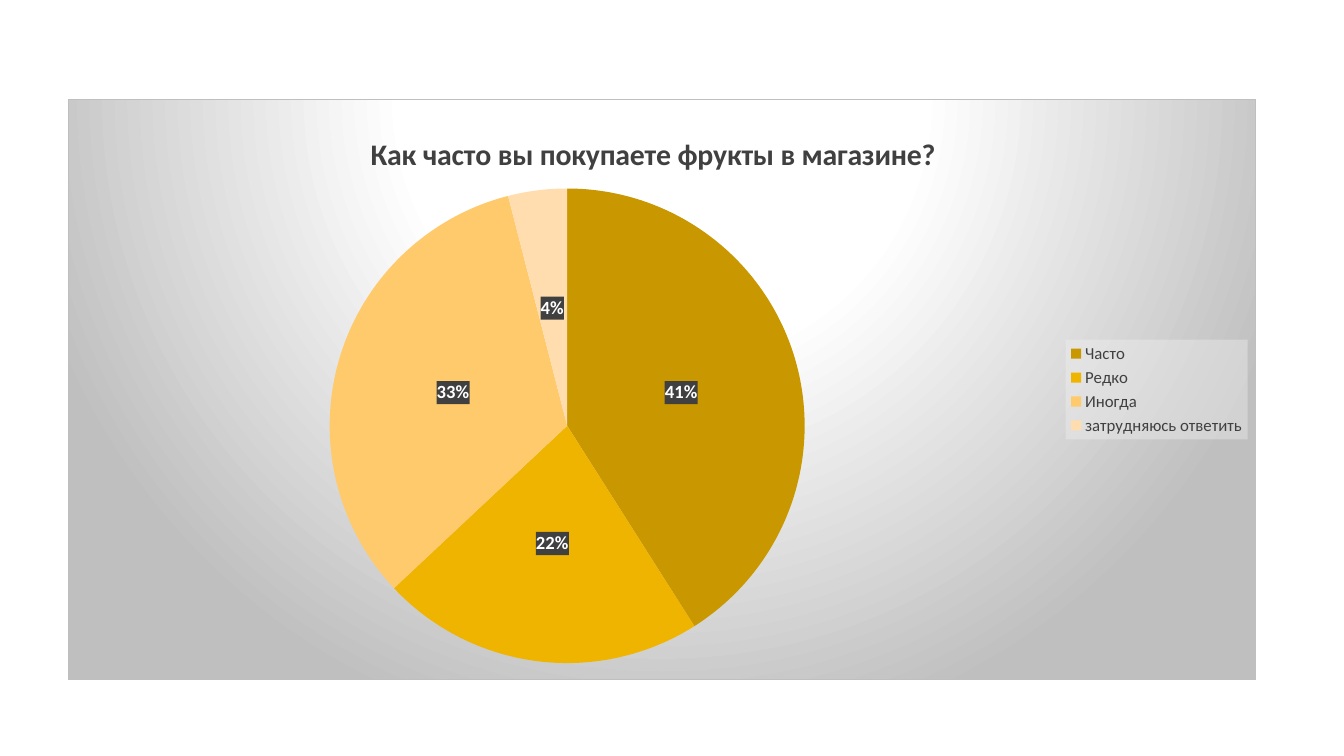
from pptx import Presentation
from pptx.chart.data import CategoryChartData as ChartData
from pptx.dml.color import RGBColor
from pptx.enum.chart import XL_CHART_TYPE as Kind
from pptx.enum.chart import XL_LABEL_POSITION as Spot
from pptx.enum.chart import XL_LEGEND_POSITION as Side
from pptx.oxml import parse_xml
from pptx.oxml.ns import nsdecls, qn
from pptx.util import Pt

FACE = "Calibri"
BLACK = RGBColor(0x00, 0x00, 0x00)
WHITE = RGBColor(0xFF, 0xFF, 0xFF)
DARK = RGBColor(0x40, 0x40, 0x40)
GRAY = RGBColor(0xBF, 0xBF, 0xBF)
PALE = RGBColor(0xF2, 0xF2, 0xF2)
SLICES = [
    ("Часто", 41, RGBColor(0xC9, 0x98, 0x00)),
    ("Редко ", 22, RGBColor(0xEF, 0xB4, 0x00)),
    ("Иногда", 33, RGBColor(0xFF, 0xCA, 0x6C)),
    ("затрудняюсь ответить", 4, RGBColor(0xFF, 0xDD, 0xAF)),
]
TITLE = "Как часто вы покупаете фрукты в магазине?"


def style(font, size, color, bold=False):
    font.name, font.size, font.bold = FACE, Pt(size), bold
    font.color.rgb = color


def solid(color, alpha):
    """Return a fill with its opacity in percent."""
    return (f'<a:solidFill><a:srgbClr val="{color}"><a:alpha val="{alpha * 1000}"/>'
            '</a:srgbClr></a:solidFill>')


def glow():
    """Return the round white-to-gray fill and the thin border."""
    stops = "".join(
        f'<a:gs pos="{pos * 1000}"><a:srgbClr val="{color}"/></a:gs>'
        for pos, color in ((0, WHITE), (39, WHITE), (100, GRAY)))
    return (f'<a:gradFill><a:gsLst>{stops}</a:gsLst><a:path path="circle">'
            '<a:fillToRect l="50000" t="-80000" r="50000" b="180000"/></a:path></a:gradFill>'
            f'<a:ln w="{Pt(0.75)}"><a:solidFill><a:srgbClr val="{GRAY}"/></a:solidFill></a:ln>')


def look(body):
    return parse_xml(f'<c:spPr {nsdecls("c", "a")}>{body}</c:spPr>')


def layout(inner=False, **parts):
    """Return a manual layout; parts are shares of the chart area."""
    target = '<c:layoutTarget val="inner"/>' if inner else ""
    modes = '<c:xMode val="edge"/><c:yMode val="edge"/>'
    body = "".join(f'<c:{key} val="{val}"/>' for key, val in parts.items())
    return parse_xml(f'<c:layout {nsdecls("c")}><c:manualLayout>{target}{modes}{body}'
                     '</c:manualLayout></c:layout>')


def add_title(chart):
    chart.has_title = True
    title = chart.chart_title
    run = title.text_frame.paragraphs[0].add_run()
    run.text = TITLE
    style(run.font, 21.3, DARK, True)
    node = chart._chartSpace.chart.find(qn("c:title"))
    for old in node.findall(qn("c:layout")):
        node.remove(old)
    node.find(qn("c:tx")).addnext(layout(x=0.25, y=0.05))
    title.include_in_layout = False


def add_legend(chart):
    chart.has_legend = True
    legend = chart.legend
    legend.position = Side.RIGHT
    legend.include_in_layout = False
    style(legend.font, 12, DARK)
    node = chart._chartSpace.chart.find(qn("c:legend"))
    node.find(qn("c:txPr")).addprevious(look(solid(PALE, 39)))


def paint(plot):
    """Colour the slices and label them with percentages."""
    plot.vary_by_categories = True
    series = plot.series[0]
    for i, (_, _, color) in enumerate(SLICES):
        fill = series.points[i].format.fill
        fill.solid()
        fill.fore_color.rgb = color
    labels = series.data_labels
    labels.show_percentage, labels.show_value = True, False
    labels.number_format, labels.number_format_is_linked = "0%", False
    labels.position = Spot.CENTER
    style(labels.font, 13.3, WHITE, True)
    node = series._element.find(qn("c:dLbls"))
    node.find(qn("c:txPr")).addprevious(look(solid(DARK, 90)))


def add_pie(slide, left, top, width, height):
    data = ChartData()
    data.categories = [name for name, _, _ in SLICES]
    data.add_series("Series 1", [val for _, val, _ in SLICES])
    box = (Pt(left), Pt(top), Pt(width), Pt(height))
    chart = slide.shapes.add_chart(Kind.PIE, *box, data).chart
    style(chart.font, 10, BLACK)
    add_title(chart)
    add_legend(chart)
    paint(chart.plots[0])
    space = chart._chartSpace
    space.chart.addnext(look(glow()))
    area = space.chart.plotArea
    for old in area.findall(qn("c:layout")):
        area.remove(old)
    area.insert(0, layout(True, x=0.22, y=0.15, w=0.4, h=0.825))


def main():
    deck = Presentation()
    deck.slide_width, deck.slide_height = Pt(960), Pt(540)
    slide = deck.slides.add_slide(deck.slide_layouts[6])
    add_pie(slide, 48.5, 70.5, 849, 415.5)
    deck.save("out.pptx")


if __name__ == "__main__":
    main()
